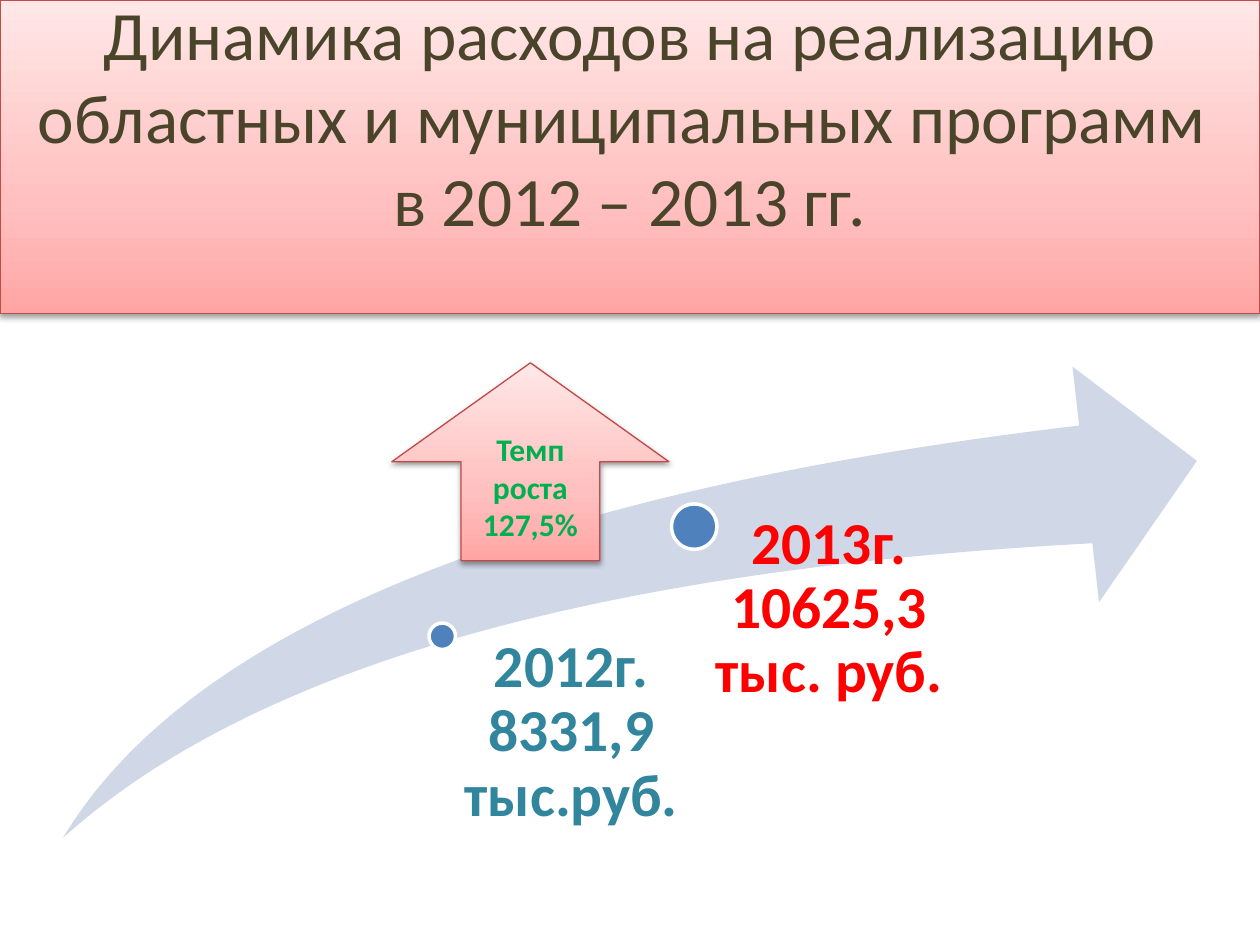
from lxml import etree
from pptx import Presentation
from pptx.dml.color import RGBColor
from pptx.enum.shapes import MSO_SHAPE
from pptx.enum.text import MSO_ANCHOR, MSO_AUTO_SIZE, PP_ALIGN
from pptx.oxml import parse_xml
from pptx.util import Inches, Pt

SWOOSH, OVAL, UP_ARROW = MSO_SHAPE.SWOOSH_ARROW, MSO_SHAPE.OVAL, MSO_SHAPE.UP_ARROW
MIDDLE, TOP = MSO_ANCHOR.MIDDLE, MSO_ANCHOR.TOP
NAMESPACE = "http://schemas.openxmlformats.org/drawingml/2006/main"
TITLE_ONLY = 5
FONT = "Calibri"
COLORS = {
    "swoosh": "D0D8E8", "dot": "4F81BD", "white": "FFFFFF",
    "title": "4A452A", "growth": "00B050", "border": "BF4C48",
    "year_2012": "31859C", "year_2013": "FF0000", "shadow": "000000",
}
GRADIENT = [(0, "FFA6A5"), (35, "FFC0BF"), (100, "FFE7E7")]

# Content
TITLE = ["Динамика расходов на реализацию областных и муниципальных программ ",
         "в 2012 – 2013 гг."]
GROWTH = "Темп роста 127,5%"
# text, colour, dot centre, dot size, label box, left inset
MILESTONES = [
    ("2012г. 8331,9 тыс.руб.", "year_2012", (3.51, 5.05), 0.21,
     (3.51, 5.05, 1.94, 1.6), 0.11),
    ("2013г. 10625,3 тыс. руб.", "year_2013", (5.51, 4.18), 0.36,
     (5.44, 4.07, 2.09, 2.68), 0.19),
]
WIDTH, HEIGHT = 10, 7.5
TITLE_BOX = (0, 0, WIDTH, 2.49)
SWOOSH_BOX = (0.5, 2.91, WIDTH * 0.9, 3.74)
GROWTH_BOX = (3.11, 2.88, 2.2, 1.57)


def color(name):
    return RGBColor.from_string(COLORS[name])


def add_shape(slide, kind, box, fill=None):
    shape = slide.shapes.add_shape(kind, *map(Inches, box))
    shape.shadow.inherit = False
    shape.line.fill.background()
    if fill:
        shape.fill.solid()
        shape.fill.fore_color.rgb = color(fill)
    return shape


def write(shape, lines, size, color_name, bold=False, anchor=MIDDLE,
          insets=(0.1, 0.05, 0.1, 0.05), spacing=1.0):
    frame = shape.text_frame
    frame.text = "\n".join(lines)
    frame.word_wrap = True
    frame.auto_size = MSO_AUTO_SIZE.NONE
    frame.vertical_anchor = anchor
    (frame.margin_left, frame.margin_top,
     frame.margin_right, frame.margin_bottom) = map(Inches, insets)
    for para in frame.paragraphs:
        para.alignment = PP_ALIGN.CENTER
        para.line_spacing = spacing
        for span in para.runs:
            span.font.name = FONT
            span.font.size = Pt(size)
            span.font.bold = bold
            span.font.color.rgb = color(color_name)


def style_panel(shape):
    """Pink upward gradient, thin red border and soft shadow below."""
    shape.fill.gradient()
    shape.fill.gradient_angle = 90
    stops = shape.fill.gradient_stops
    stop_list = shape.element.spPr.find(f".//{{{NAMESPACE}}}gsLst")
    for old in list(stop_list)[:len(stops)]:
        stop_list.remove(old)
    for position, value in GRADIENT:
        stop = etree.SubElement(stop_list, f"{{{NAMESPACE}}}gs", pos=str(position * 1000))
        etree.SubElement(stop, f"{{{NAMESPACE}}}srgbClr", val=value)
    shape.line.color.rgb = color("border")
    shape.line.width = Pt(0.75)
    shape.shadow.inherit = False
    effects = shape.element.spPr.find(f"{{{NAMESPACE}}}effectLst")
    effects.append(parse_xml(
        f'<a:outerShdw xmlns:a="{NAMESPACE}" blurRad="{Pt(3.1)}" dist="{Pt(1.6)}" '
        f'dir="5400000" rotWithShape="0"><a:srgbClr val="{COLORS["shadow"]}">'
        '<a:alpha val="38000"/></a:srgbClr></a:outerShdw>'))


def main():
    deck = Presentation()
    deck.slide_width, deck.slide_height = Inches(WIDTH), Inches(HEIGHT)
    slide = deck.slides.add_slide(deck.slide_layouts[TITLE_ONLY])

    # Rising swoosh
    swoosh = add_shape(slide, SWOOSH, SWOOSH_BOX, "swoosh")
    swoosh.adjustments[0] = swoosh.adjustments[1] = 0.25

    # Yearly milestones
    for text, text_color, (x, y), size, label_box, inset in MILESTONES:
        dot = add_shape(slide, OVAL, (x - size / 2, y - size / 2, size, size), "dot")
        dot.line.color.rgb = color("white")
        dot.line.width = Pt(2)
        label = slide.shapes.add_textbox(*map(Inches, label_box))
        write(label, [text], 34, text_color, True, TOP, (inset, 0, 0, 0), 0.9)

    # Title panel
    title = slide.shapes.title
    title.left, title.top, title.width, title.height = map(Inches, TITLE_BOX)
    style_panel(title)
    write(title, TITLE, 39.6, "title", insets=(0.1, 0, 0.1, 0.65))

    # Growth arrow
    growth = add_shape(slide, UP_ARROW, GROWTH_BOX)
    style_panel(growth)
    write(growth, [GROWTH], 18, "growth", True)

    deck.save("out.pptx")


if __name__ == "__main__":
    main()
